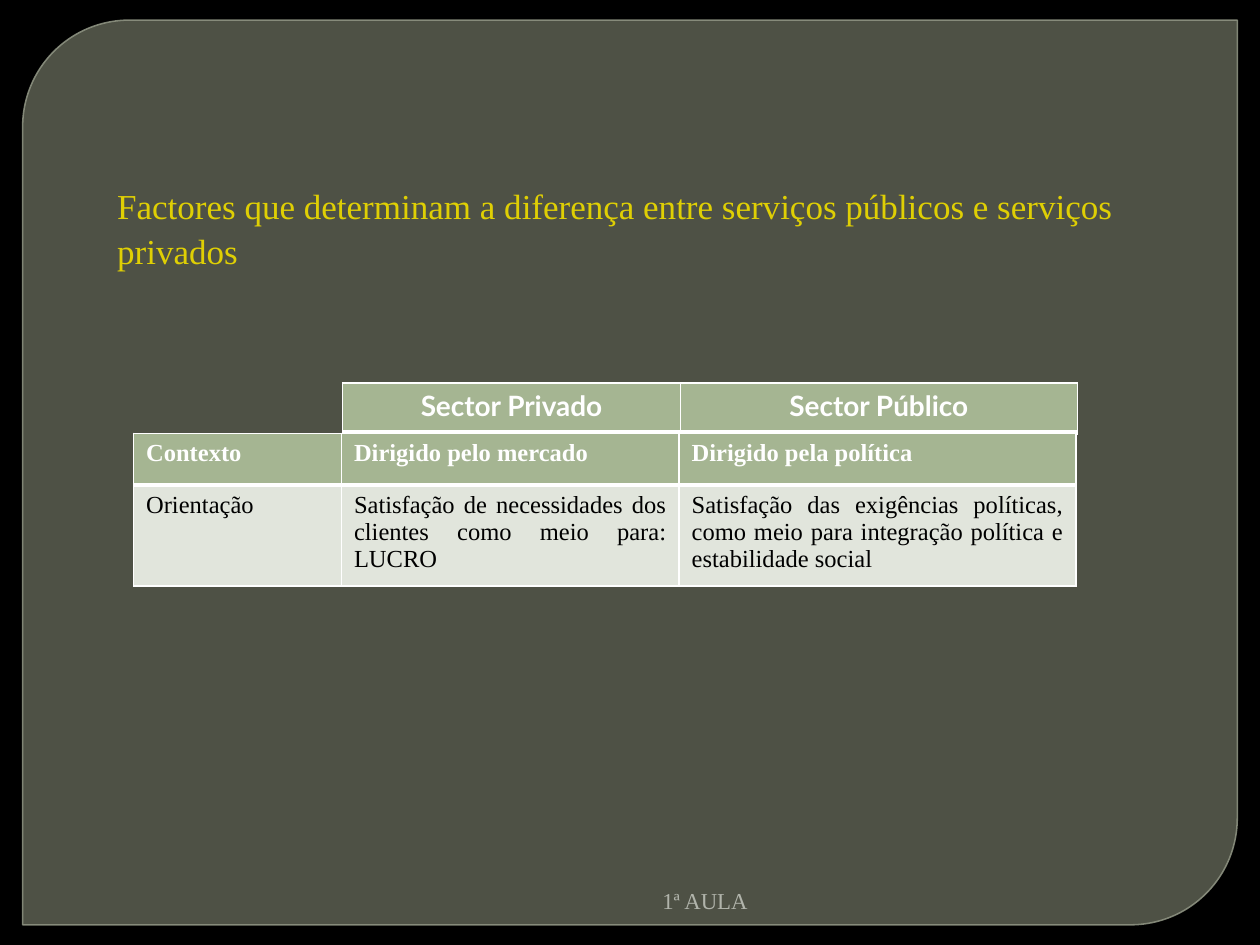
"""Build a slide comparing private and public sector services."""
from dataclasses import dataclass

from lxml.etree import SubElement
from pptx import Presentation
from pptx.dml.color import RGBColor
from pptx.enum.shapes import MSO_SHAPE
from pptx.enum.text import MSO_ANCHOR, PP_ALIGN
from pptx.oxml import parse_xml
from pptx.oxml.ns import nsdecls, qn
from pptx.slide import Slide
from pptx.text.text import TextFrame
from pptx.util import Inches, Pt

COLORS = {
    "background": "000000",
    "panel": "787D6B",
    "panel_line": "8F9483",
    "title": "DFCF04",
    "footer": "B1B4AB",
    "header": "A5B592",
    "body": "E1E5DC",
    "white": "FFFFFF",
    "black": "000000",
}
SERIF = "Times New Roman"
SECTOR_WIDTHS = (2.68, 3.15)


@dataclass(frozen=True)
class RowStyle:
    fill: str
    color: str
    size: int
    font: str
    bold: bool
    align: PP_ALIGN
    bottom_border: int


@dataclass(frozen=True)
class TableRow:
    texts: tuple[str, ...]
    height: float
    style: RowStyle


SECTOR = RowStyle("header", "white", 16, "Lato", True, PP_ALIGN.CENTER, 3)
CONTEXT = RowStyle("header", "white", 14, SERIF, True, PP_ALIGN.JUSTIFY, 3)
DETAIL = RowStyle("body", "black", 14, SERIF, False, PP_ALIGN.JUSTIFY, 1)

SECTOR_ROWS = (TableRow(("Sector Privado", "Sector Público"), 0.39, SECTOR),)
FACTOR_ROWS = (
    TableRow(("Contexto", "Dirigido pelo mercado", "Dirigido pela política"), 0.41, CONTEXT),
    TableRow(
        (
            "Orientação",
            "Satisfação de necessidades dos clientes como meio para: LUCRO",
            "Satisfação das exigências políticas, como meio para integração política e estabilidade social",
        ),
        0.8,
        DETAIL,
    ),
)


def rgb(name: str) -> RGBColor:
    """Return the named colour."""
    return RGBColor.from_string(COLORS[name])


def write_text(frame: TextFrame, text: str, *, size: int, color: str, font: str = SERIF,
               bold: bool = False, align: PP_ALIGN = PP_ALIGN.LEFT,
               anchor: MSO_ANCHOR = MSO_ANCHOR.TOP, spacing: float = 1.0) -> None:
    """Write one formatted paragraph into a text frame."""
    frame.word_wrap = True
    frame.vertical_anchor = anchor
    write_paragraph(frame, text, size, color, font, bold, align, spacing)


def write_paragraph(frame: TextFrame, text: str, size: int, color: str, font: str,
                    bold: bool, align: PP_ALIGN, spacing: float) -> None:
    """Fill the first paragraph of a frame."""
    paragraph = frame.paragraphs[0]
    paragraph.alignment = align
    paragraph.line_spacing = spacing
    run = paragraph.add_run()
    run.text = text
    run.font.size = Pt(size)
    run.font.name = font
    run.font.bold = bold
    run.font.color.rgb = rgb(color)


def set_opacity(fill_parent, percent: int) -> None:
    """Set the opacity of a solid colour."""
    color = fill_parent.find(qn("a:solidFill")).find(qn("a:srgbClr"))
    SubElement(color, qn("a:alpha"), val=str(percent * 1000))


def set_borders(cell, bottom: int) -> None:
    """Give a cell white borders."""
    properties = cell._tc.get_or_add_tcPr()
    widths = {"lnL": 1, "lnR": 1, "lnT": 1, "lnB": bottom}
    for index, (tag, width) in enumerate(widths.items()):
        properties.insert(index, parse_xml(
            f'<a:{tag} {nsdecls("a")} w="{Pt(width)}"><a:solidFill>'
            f'<a:srgbClr val="{COLORS["white"]}"/></a:solidFill></a:{tag}>'))


def add_panel(slide: Slide):
    """Add the translucent panel with two rounded corners."""
    panel = slide.shapes.add_shape(MSO_SHAPE.ROUND_2_DIAG_RECTANGLE,
                                   Inches(0.18), Inches(0.16), Inches(9.64), Inches(7.18))
    panel.adjustments[0] = 0.118
    panel.adjustments[1] = 0
    panel.shadow.inherit = False
    panel.fill.solid()
    panel.fill.fore_color.rgb = rgb("panel")
    panel.line.color.rgb = rgb("panel_line")
    panel.line.width = Pt(0.87)
    properties = panel.element.spPr
    set_opacity(properties, 65)
    set_opacity(properties.find(qn("a:ln")), 88)
    return panel


def add_table(slide: Slide, left: float, top: float, widths: tuple[float, ...],
              rows: tuple[TableRow, ...]) -> None:
    """Add a table with one style per row."""
    height = sum(row.height for row in rows)
    table = slide.shapes.add_table(len(rows), len(widths), Inches(left), Inches(top),
                                   Inches(sum(widths)), Inches(height)).table
    table.horz_banding = False
    for column, width in zip(table.columns, widths):
        column.width = Inches(width)
    for row_index, row in enumerate(rows):
        style = row.style
        table.rows[row_index].height = Inches(row.height)
        for column_index, text in enumerate(row.texts):
            cell = table.cell(row_index, column_index)
            cell.fill.solid()
            cell.fill.fore_color.rgb = rgb(style.fill)
            set_borders(cell, style.bottom_border)
            write_paragraph(cell.text_frame, text, style.size, style.color, style.font,
                            style.bold, style.align, 1.0)


def main() -> None:
    """Build and save the presentation."""
    presentation = Presentation()
    presentation.slide_width = Inches(10)
    presentation.slide_height = Inches(7.5)
    slide = presentation.slides.add_slide(presentation.slide_layouts[5])
    slide.background.fill.solid()
    slide.background.fill.fore_color.rgb = rgb("background")

    panel = add_panel(slide)
    title = slide.shapes.title
    panel.element.addnext(title.element)
    title.left, title.top = Inches(0.83), Inches(1.39)
    title.width, title.height = Inches(8.43), Inches(2.12)
    write_text(title.text_frame,
               "Factores que determinam a diferença entre serviços públicos e serviços privados",
               size=20, color="title", spacing=1.07)

    footer = slide.shapes.add_textbox(Inches(1.42), Inches(7), Inches(4.61), Inches(0.3))
    write_text(footer.text_frame, "1ª AULA", size=13, color="footer",
               align=PP_ALIGN.RIGHT, anchor=MSO_ANCHOR.MIDDLE)

    add_table(slide, 2.72, 3.04, SECTOR_WIDTHS, SECTOR_ROWS)
    add_table(slide, 1.06, 3.44, (1.65, *SECTOR_WIDTHS), FACTOR_ROWS)
    presentation.save("out.pptx")


if __name__ == "__main__":
    main()
